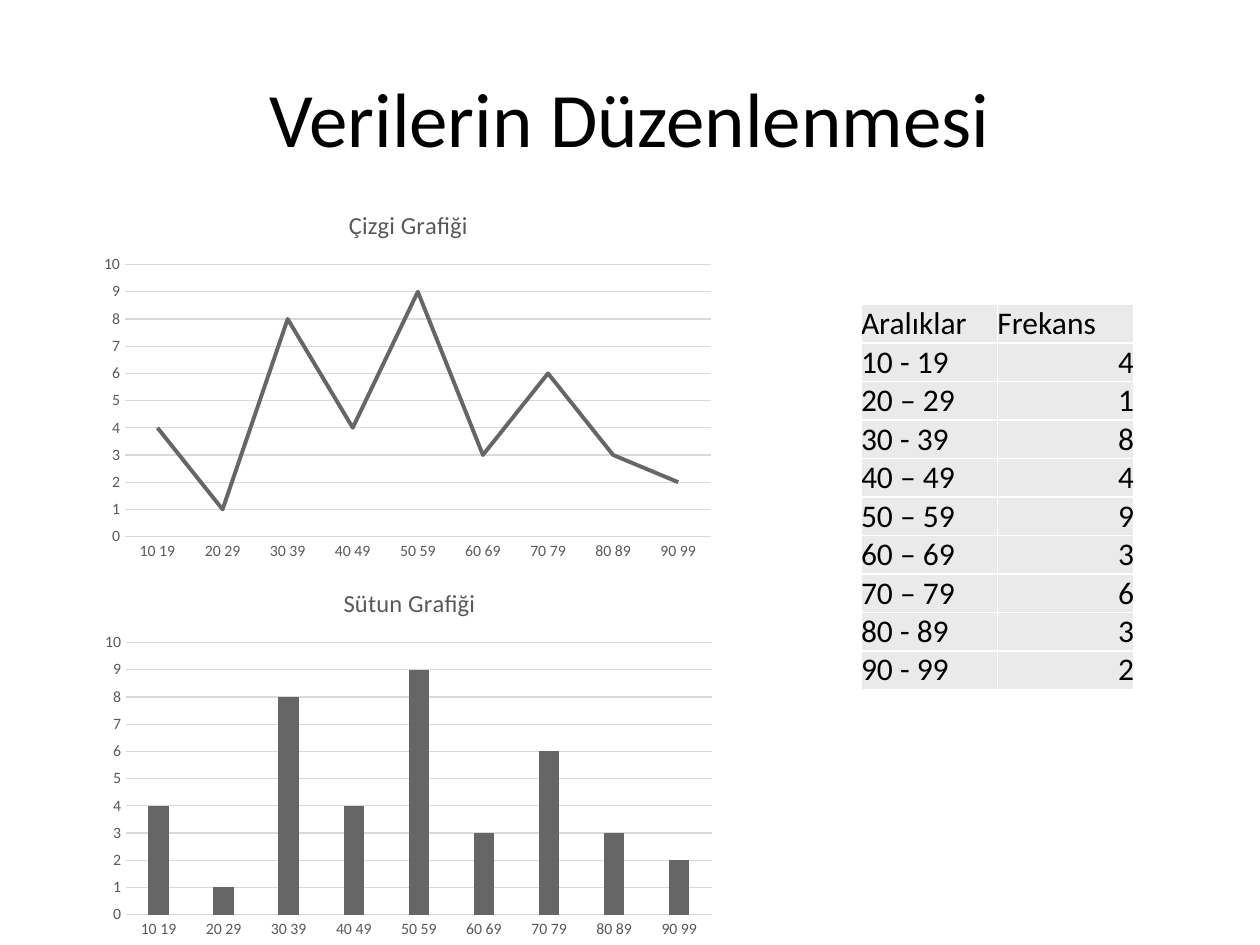
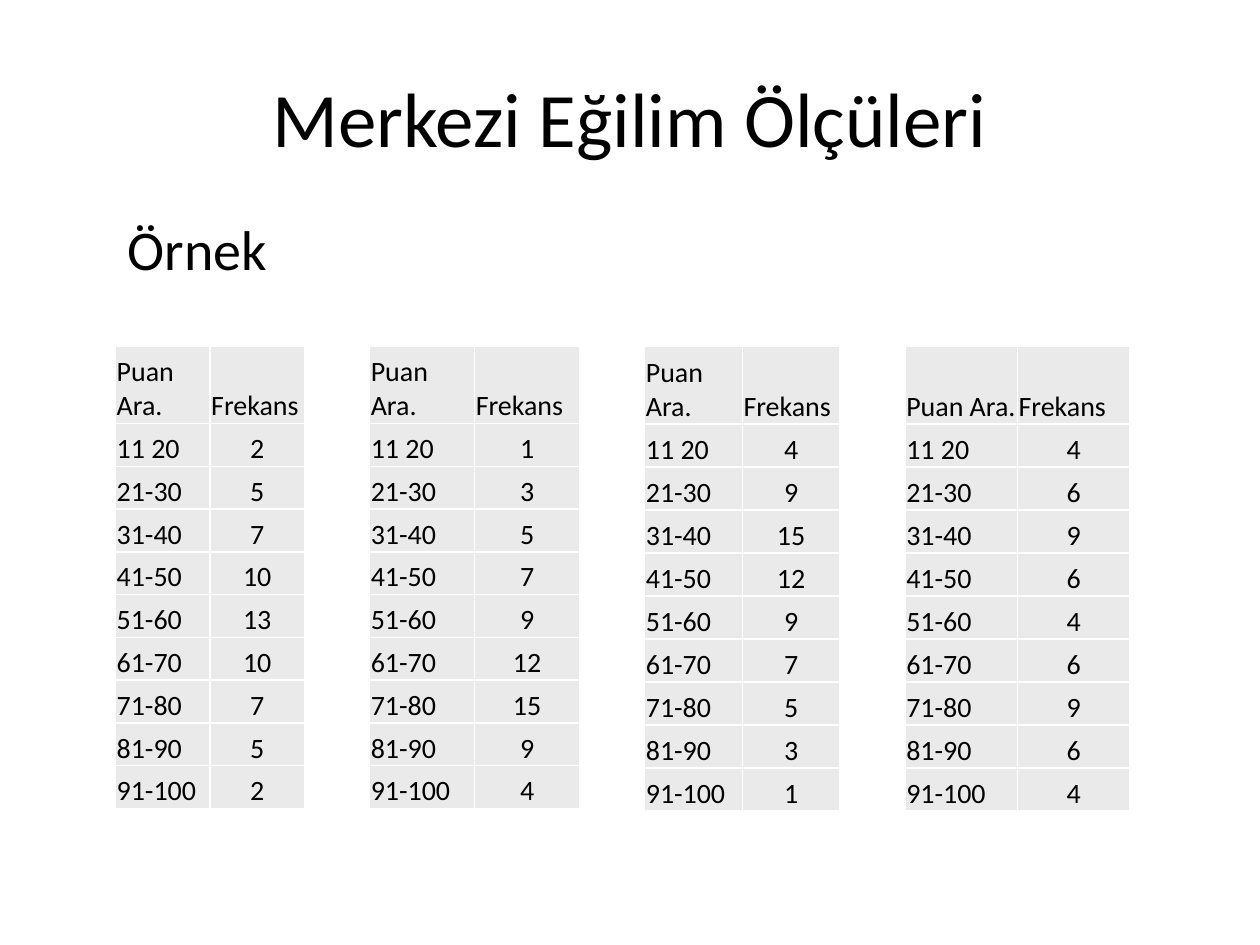
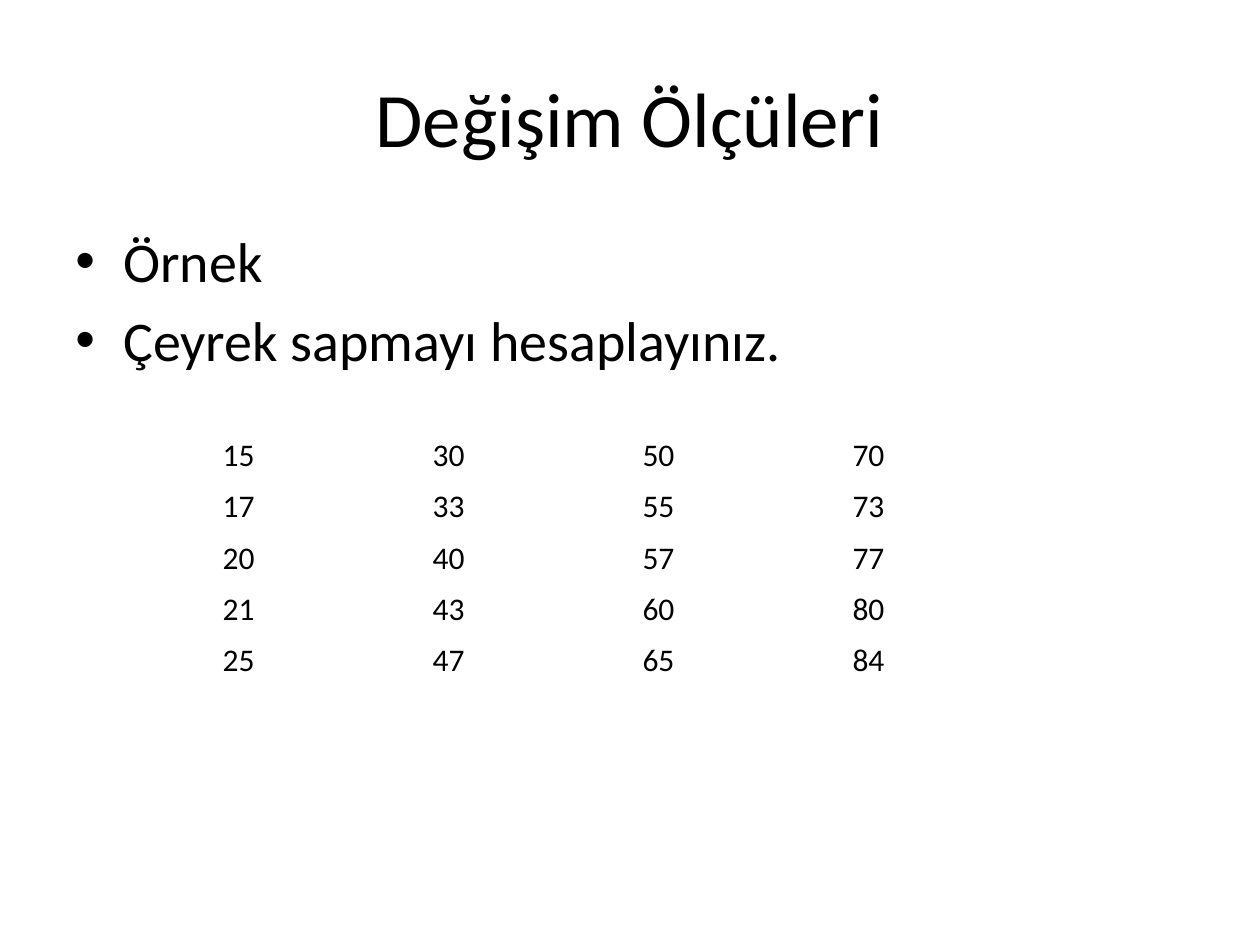
from dataclasses import dataclass

from lxml.etree import SubElement
from pptx import Presentation
from pptx.chart.data import CategoryChartData
from pptx.dml.color import RGBColor
from pptx.enum.chart import XL_CHART_TYPE, XL_TICK_MARK
from pptx.enum.text import MSO_ANCHOR, PP_ALIGN
from pptx.oxml import parse_xml
from pptx.oxml.ns import nsdecls, qn
from pptx.util import Emu, Inches, Pt

# Shared look; the page is a grid of 120 columns by 90 rows
WIDE, HIGH = Inches(10), Inches(7.5)
COLS, ROWS = 120, 90
FONT = "Calibri"
BLACK, WHITE, GRAY = "000000", "FFFFFF", "EAEAEA"
DARK, LABEL, RULE = "666666", "595959", "D9D9D9"
LEFT, MID, RIGHT = PP_ALIGN.LEFT, PP_ALIGN.CENTER, PP_ALIGN.RIGHT


@dataclass
class Box:
    """A place on the page, in grid columns and rows."""
    left: float
    top: float
    wide: float
    high: float

    def emu(self) -> tuple:
        return (across(self.left), down(self.top),
                across(self.wide), down(self.high))


@dataclass
class Grid:
    """A table: its place, text and cell style."""
    box: Box
    rows: list
    size: float
    head: float                # share of the height taken by the first row
    align: PP_ALIGN = LEFT     # number columns below the heading
    fill: str = ""
    pad: tuple = (0, 0, 0, 0)  # left, top, right, bottom in inches
    anchor: MSO_ANCHOR = MSO_ANCHOR.BOTTOM


@dataclass
class Plot:
    """A chart of the shared frequencies."""
    name: str
    kind: XL_CHART_TYPE
    box: Box


def across(cols: float) -> Emu:
    return Emu(round(WIDE * cols / COLS))


def down(rows: float) -> Emu:
    return Emu(round(HIGH * rows / ROWS))


def tint(code: str) -> RGBColor:
    return RGBColor.from_string(code)


def style(font, size: float, code: str = BLACK) -> None:
    font.name, font.size, font.bold = FONT, Pt(size), False
    font.color.rgb = tint(code)


def write(para, text: str, size: float, code: str = BLACK) -> None:
    run = para.add_run()
    run.text = text
    style(run.font, size, code)


def start(deck, title: str):
    """Add a slide with its title."""
    slide = deck.slides.add_slide(deck.slide_layouts[5])
    head = slide.shapes.title
    head.left, head.top, head.width, head.height = Box(6, 3.6, 108, 15).emu()
    frame = head.text_frame
    frame.vertical_anchor = MSO_ANCHOR.MIDDLE
    frame.paragraphs[0].alignment = MID
    write(frame.paragraphs[0], title, 44)
    return slide


def add_text(slide, box: Box, lines: list, dots: bool = False) -> None:
    frame = slide.shapes.add_textbox(*box.emu()).text_frame
    frame.word_wrap = True
    for i, line in enumerate(lines):
        para = frame.add_paragraph() if i else frame.paragraphs[0]
        if dots:
            props = para._p.get_or_add_pPr()
            inset = Inches(0.38)
            props.set("marL", str(inset))
            props.set("indent", str(-inset))
            SubElement(props, qn("a:buFont"), typeface="Arial")
            SubElement(props, qn("a:buChar"), char="•")
        if i:
            para.space_before = Pt(6.4)
        write(para, line, 32)


def edge(cell) -> None:
    """Give a cell thin white borders."""
    props = cell._tc.get_or_add_tcPr()
    for side in "LRTB":
        props.append(parse_xml(
            f'<a:ln{side} {nsdecls("a")} w="{Pt(1)}"><a:solidFill>'
            f'<a:srgbClr val="{WHITE}"/></a:solidFill></a:ln{side}>'))


def add_grid(slide, grid: Grid) -> None:
    count, wide = len(grid.rows), len(grid.rows[0])
    table = slide.shapes.add_table(count, wide, *grid.box.emu()).table
    table.first_row = table.horz_banding = False
    first = grid.box.high * grid.head
    rest = (grid.box.high - first) / (count - 1)
    for r, row in enumerate(grid.rows):
        table.rows[r].height = down(rest if r else first)
        for c, text in enumerate(row):
            cell = table.cell(r, c)
            (cell.margin_left, cell.margin_top, cell.margin_right,
             cell.margin_bottom) = map(Inches, grid.pad)
            cell.vertical_anchor = grid.anchor
            if grid.fill:
                edge(cell)
                cell.fill.solid()
                cell.fill.fore_color.rgb = tint(grid.fill)
            else:
                cell.fill.background()
            para = cell.text_frame.paragraphs[0]
            para.alignment = grid.align if r and c else LEFT
            write(para, str(text), grid.size)


def add_plot(slide, plot: Plot, cats: list, vals: list) -> None:
    data = CategoryChartData()
    data.categories = cats
    data.add_series("Series 1", vals)
    chart = slide.shapes.add_chart(plot.kind, *plot.box.emu(), data).chart
    style(chart.font, 10)
    chart.has_legend = False
    chart.has_title = True
    write(chart.chart_title.text_frame.paragraphs[0], plot.name, 14, LABEL)
    chart.chart_title.include_in_layout = False

    # Axes
    for axis in (chart.category_axis, chart.value_axis):
        style(axis.tick_labels.font, 9, LABEL)
        axis.major_tick_mark = axis.minor_tick_mark = XL_TICK_MARK.NONE
    rule = chart.value_axis
    rule.minimum_scale, rule.maximum_scale, rule.major_unit = 0, 10, 1
    rule.format.line.fill.background()
    for line in (chart.category_axis.format.line,
                 rule.major_gridlines.format.line):
        line.color.rgb, line.width = tint(RULE), Pt(0.75)

    # Series
    body = chart.plots[0]
    body.vary_by_categories = False
    series = body.series[0]
    if plot.kind == XL_CHART_TYPE.LINE:
        series.smooth = False
        series.format.line.color.rgb = tint(DARK)
        series.format.line.width = Pt(2.25)
    else:
        body.gap_width, body.overlap = 219, -27
        series.format.fill.solid()
        series.format.fill.fore_color.rgb = tint(DARK)

    # Inner plot area, as shares of the chart
    area = chart._chartSpace.chart.plotArea
    for old in area.findall(qn("c:layout")):
        area.remove(old)
    spots = {"x": 0.05, "y": 0.2, "w": 0.93, "h": 0.72}
    parts = "".join(f'<c:{k}Mode val="edge"/>' for k in "xy")
    parts += "".join(f'<c:{k} val="{v}"/>' for k, v in spots.items())
    area.insert(0, parse_xml(
        f'<c:layout {nsdecls("c")}><c:manualLayout>'
        f'<c:layoutTarget val="inner"/>{parts}'
        '</c:manualLayout></c:layout>'))


# Slide content
SPANS = ["10 - 19", "20 – 29", "30 - 39", "40 – 49", "50 – 59",
         "60 – 69", "70 – 79", "80 - 89", "90 - 99"]
COUNTS = [4, 1, 8, 4, 9, 3, 6, 3, 2]
PLOTS = [
    Plot("Sütun Grafiği", XL_CHART_TYPE.COLUMN_CLUSTERED, Box(9, 54, 60, 36)),
    Plot("Çizgi Grafiği", XL_CHART_TYPE.LINE, Box(8.9, 18, 60, 36)),
]
SCORES = ["11 20", "21-30", "31-40", "41-50", "51-60",
          "61-70", "71-80", "81-90", "91-100"]
# Width, height and frequencies of each score table
SETS = [
    (18, 44, [2, 5, 7, 10, 13, 10, 7, 5, 2]),
    (20, 44, [1, 3, 5, 7, 9, 12, 15, 9, 4]),
    (18.6, 44.25, [4, 9, 15, 12, 9, 7, 5, 3, 1]),
    (21.4, 44.25, [4, 6, 9, 6, 4, 6, 9, 6, 4]),
]
GAP = 6.2
MARKS = [(15, 30, 50, 70), (17, 33, 55, 73), (20, 40, 57, 77),
         (21, 43, 60, 80), (25, 47, 65, 84)]


def show_data(deck) -> None:
    slide = start(deck, "Verilerin Düzenlenmesi")
    rows = [("Aralıklar", "Frekans"), *zip(SPANS, COUNTS)]
    add_grid(slide, Grid(Box(82, 29, 26, 36), rows, 18, 0.1, RIGHT, GRAY))
    cats = [f"{10 * n} {10 * n + 9}" for n in range(1, 10)]
    for plot in PLOTS:
        add_plot(slide, plot, cats, COUNTS)


def show_means(deck) -> None:
    slide = start(deck, "Merkezi Eğilim Ölçüleri")
    add_text(slide, Box(11, 19.8, 36, 9), ["Örnek"])
    left = 11
    for wide, high, counts in SETS:
        rows = [("Puan Ara.", "Frekans"), *zip(SCORES, counts)]
        add_grid(slide, Grid(Box(left, 33, wide, high), rows, 16, 1 / 6,
                             MID, GRAY, (0.01, 0.01, 0.01, 0)))
        left += wide + GAP


def show_spread(deck) -> None:
    slide = start(deck, "Değişim Ölçüleri")
    add_text(slide, Box(6, 21, 108, 59.4),
             ["Örnek", "Çeyrek sapmayı hesaplayınız."], dots=True)
    add_grid(slide, Grid(Box(20, 41, 80, 24.4), MARKS, 18, 0.2,
                         pad=(0.1, 0.05, 0.1, 0.05), anchor=MSO_ANCHOR.TOP))


def main() -> None:
    deck = Presentation()
    deck.slide_width, deck.slide_height = WIDE, HIGH
    for show in (show_data, show_means, show_spread):
        show(deck)
    deck.save("out.pptx")


if __name__ == "__main__":
    main()
